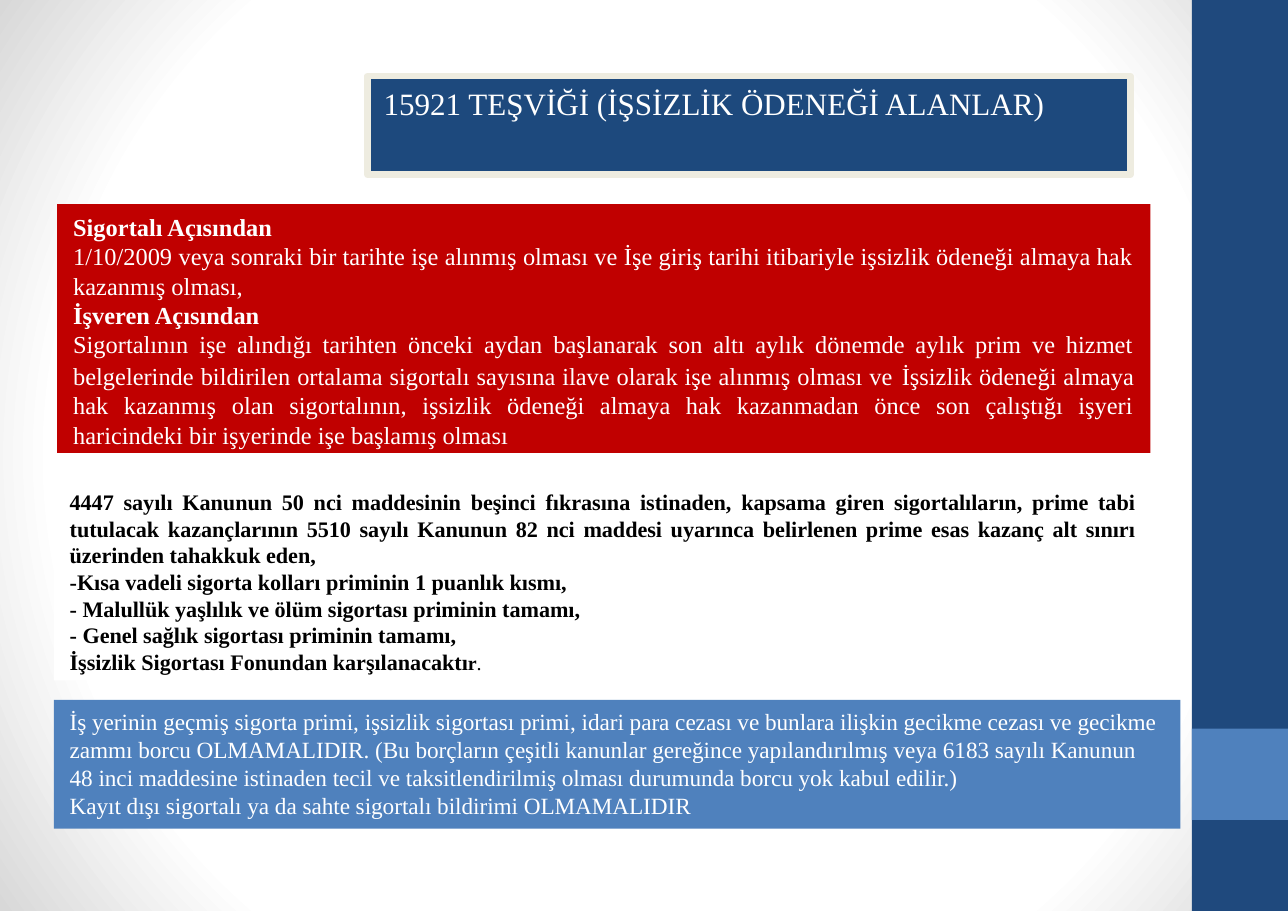
"""Build the slide on the 15921 incentive for people on unemployment benefit."""
import pptx
import pptx.util
import pptx.dml.color
import pptx.enum.shapes
import pptx.enum.text
import pptx.oxml
import pptx.oxml.ns

Cm = pptx.util.Cm
ALIGN = pptx.enum.text.PP_ALIGN

COLORS = {"navy": "1F497D", "title": "1D497D", "frame": "EEECE0", "red": "C00000",
          "blue": "4F81BD", "white": "FFFFFF", "black": "000000", "edge": "D8D8D8"}
FONT = "Times New Roman"
SLIDE_WIDTH, SLIDE_HEIGHT = 20.5, 14.5
BAND_LEFT = 18.97

TITLE = [[("15921 TEŞVİĞİ (İŞSİZLİK ÖDENEĞİ ALANLAR)", {})]]
CONDITIONS = [
    [("Sigortalı Açısından", {"bold": True})],
    [("1/10/2009 veya sonraki bir tarihte işe alınmış olması ve İşe giriş tarihi itibariyle "
      "işsizlik ödeneği almaya hak kazanmış olması,", {})],
    [("İşveren Açısından", {"bold": True})],
    [("Sigortalının işe alındığı tarihten önceki aydan başlanarak son altı aylık dönemde aylık "
      "prim ve hizmet belgelerinde bildirilen ortalama sigortalı sayısına ilave olarak işe "
      "alınmış olması ve", {}),
     (" ", {"size": 12}),
     ("İşsizlik ödeneği almaya hak kazanmış olan sigortalının, işsizlik ödeneği almaya hak "
      "kazanmadan önce son çalıştığı işyeri haricindeki bir işyerinde işe başlamış olması", {})],
]
COVERAGE = [
    [("4447 sayılı Kanunun 50 nci maddesinin beşinci fıkrasına istinaden, kapsama giren "
      "sigortalıların, prime tabi tutulacak kazançlarının 5510 sayılı Kanunun 82 nci maddesi "
      "uyarınca belirlenen prime esas kazanç alt sınırı üzerinden tahakkuk eden,", {})],
    [("-Kısa vadeli sigorta kolları priminin 1 puanlık kısmı,", {})],
    [("- Malullük yaşlılık ve ölüm sigortası priminin tamamı,", {})],
    [("- Genel sağlık sigortası priminin tamamı,", {})],
    [("İşsizlik Sigortası Fonundan karşılanacaktı", {}), ("r", {"size": 9}),
     (".", {"size": 9, "bold": False})],
]
DEBTS = [
    [("İş yerinin geçmiş sigorta primi, işsizlik sigortası primi, idari para cezası ve bunlara "
      "ilişkin gecikme cezası ve gecikme zammı borcu OLMAMALIDIR. (Bu borçların çeşitli kanunlar "
      "gereğince yapılandırılmış veya 6183 sayılı Kanunun 48 inci maddesine istinaden tecil ve "
      "taksitlendirilmiş olması durumunda borcu yok kabul edilir.)", {})],
    [("Kayıt dışı sigortalı ya da sahte sigortalı bildirimi OLMAMALIDIR", {})],
]


def rgb(name):
    return pptx.dml.color.RGBColor.from_string(COLORS[name])


def paint(shape, color):
    shape.fill.solid()
    shape.fill.fore_color.rgb = rgb(color)


def add_panel(slide, box, color):
    panel = slide.shapes.add_shape(pptx.enum.shapes.MSO_SHAPE.RECTANGLE, *map(Cm, box))
    panel.shadow.inherit = False
    paint(panel, color)
    panel.line.fill.background()
    return panel


def place(placeholder, box, color):
    placeholder.left, placeholder.top, placeholder.width, placeholder.height = map(Cm, box)
    paint(placeholder, color)
    return placeholder


def write(shape, paragraphs, size, color="white", bold=False, align=ALIGN.LEFT):
    frame = shape.text_frame
    frame.word_wrap = True
    frame.auto_size = pptx.enum.text.MSO_AUTO_SIZE.NONE
    frame.vertical_anchor = pptx.enum.text.MSO_ANCHOR.TOP
    for index, runs in enumerate(paragraphs):
        paragraph = frame.add_paragraph() if index else frame.paragraphs[0]
        properties = paragraph._p.get_or_add_pPr()
        properties.set("marL", "0")
        properties.set("indent", "0")
        properties.append(pptx.oxml.parse_xml(
            f'<a:buNone {pptx.oxml.ns.nsdecls("a")}/>'))
        paragraph.alignment = align
        paragraph.space_before = pptx.util.Pt(0)
        for text, own in runs:
            run = paragraph.add_run()
            run.text = text
            run.font.name = FONT
            run.font.size = pptx.util.Pt(own.get("size", size))
            run.font.bold = own.get("bold", bold)
            run.font.color.rgb = rgb(color)


def shade_background(slide):
    slide.background.fill.gradient()
    gradient = slide.element.find(".//" + pptx.oxml.ns.qn("a:gradFill"))
    stops = "".join(f'<a:gs pos="{percent * 1000}"><a:srgbClr val="{COLORS[name]}"/></a:gs>'
                    for percent, name in ((0, "white"), (75, "white"), (100, "edge")))
    radial = pptx.oxml.parse_xml(
        f'<a:gradFill {pptx.oxml.ns.nsdecls("a")} rotWithShape="1"><a:gsLst>{stops}</a:gsLst>'
        '<a:path path="circle"><a:fillToRect l="50000" t="50000" r="50000" b="50000"/></a:path>'
        '</a:gradFill>')
    gradient.getparent().replace(gradient, radial)


def main():
    deck = pptx.Presentation()
    deck.slide_width, deck.slide_height = Cm(SLIDE_WIDTH), Cm(SLIDE_HEIGHT)
    slide = deck.slides.add_slide(deck.slide_layouts[1])
    shade_background(slide)

    band_width = SLIDE_WIDTH - BAND_LEFT
    add_panel(slide, (BAND_LEFT, 0, band_width, SLIDE_HEIGHT), "navy")
    add_panel(slide, (BAND_LEFT, 11.6, band_width, 1.45), "blue")

    title = place(slide.shapes.title, (5.85, 1.21, 12.14, 1.57), "title")
    title.line.color.rgb = rgb("frame")
    title.line.width = pptx.util.Pt(3)
    write(title, TITLE, size=14)

    conditions = place(slide.placeholders[1], (0.91, 3.25, 17.4, 3.96), "red")
    write(conditions, CONDITIONS, size=11, align=ALIGN.JUSTIFY)

    coverage = add_panel(slide, (0.86, 7.65, 17.45, 3.18), "white")
    write(coverage, COVERAGE, size=10, color="black", bold=True, align=ALIGN.JUSTIFY)

    debts = add_panel(slide, (0.86, 11.14, 17.93, 2.05), "blue")
    write(debts, DEBTS, size=10.5)

    deck.save("out.pptx")


if __name__ == "__main__":
    main()
